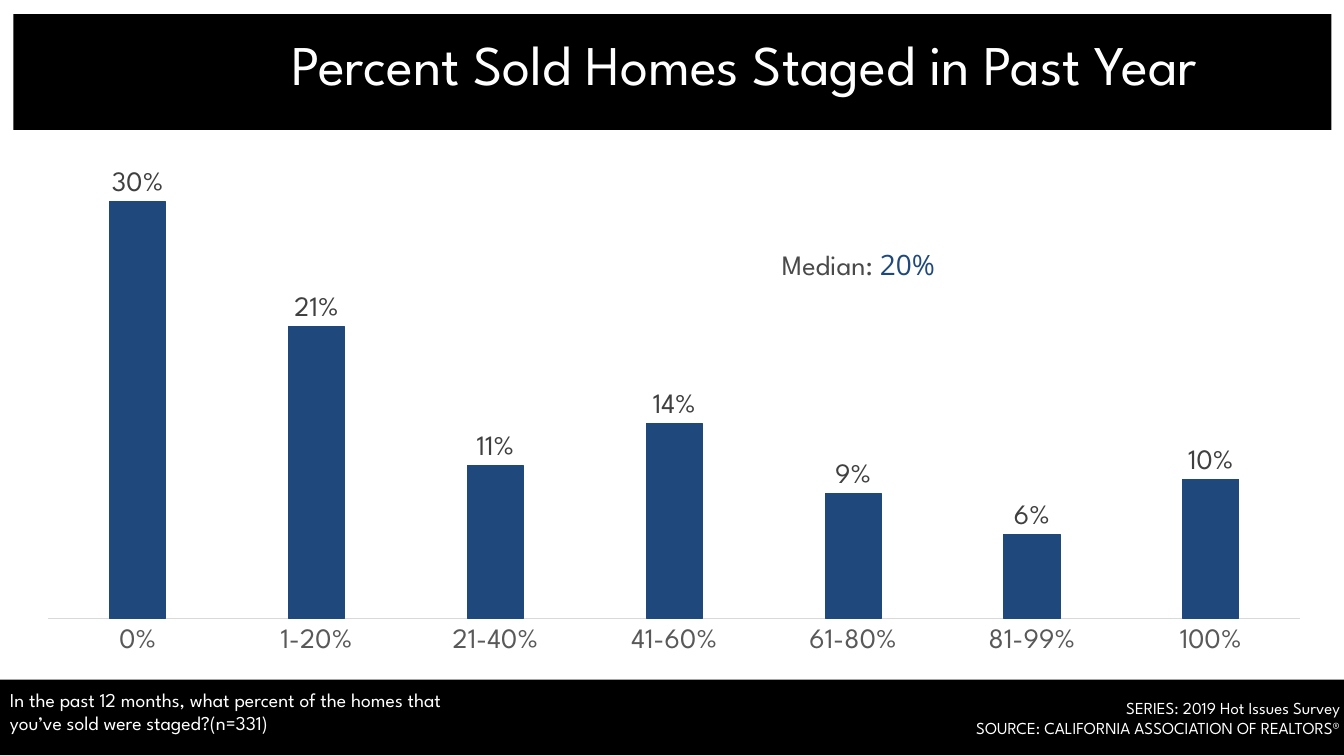
from dataclasses import dataclass

from lxml import etree
from pptx import Presentation
from pptx.chart.data import CategoryChartData
from pptx.dml.color import RGBColor
from pptx.enum.chart import XL_CHART_TYPE, XL_LABEL_POSITION, XL_TICK_LABEL_POSITION, XL_TICK_MARK
from pptx.enum.shapes import MSO_SHAPE
from pptx.enum.text import MSO_ANCHOR, MSO_AUTO_SIZE, PP_ALIGN
from pptx.oxml.ns import qn
from pptx.util import Pt


@dataclass(frozen=True)
class Theme:
    font: str = "League Spartan"
    accent_font: str = "Open Sans"
    black: RGBColor = RGBColor(0, 0, 0)
    white: RGBColor = RGBColor(255, 255, 255)
    blue: RGBColor = RGBColor(0x1F, 0x49, 0x7D)
    median: RGBColor = RGBColor(0x4A, 0x4A, 0x4A)
    label: RGBColor = RGBColor(0x40, 0x40, 0x40)
    category: RGBColor = RGBColor(0x59, 0x59, 0x59)
    axis: RGBColor = RGBColor(0xD9, 0xD9, 0xD9)
    title_size: int = 40
    body_size: int = 20
    question_size: int = 14
    source_size: int = 12
    chart_size: int = 10


THEME = Theme()
STAGED_SHARES = {"0%": 0.3, "1-20%": 0.21, "21-40%": 0.11, "41-60%": 0.14,
                 "61-80%": 0.09, "81-99%": 0.06, "100%": 0.1}


def style_font(font, size, color, name=THEME.font):
    font.name = name
    font.size = Pt(size)
    font.color.rgb = color


def add_band(s, *box):
    band = s.shapes.add_shape(MSO_SHAPE.RECTANGLE, *map(Pt, box))
    band.shadow.inherit = False
    band.fill.solid()
    band.fill.fore_color.rgb = THEME.black
    band.line.fill.background()


def set_title(s, text, *box):
    title = s.shapes.title
    title.left, title.top, title.width, title.height = map(Pt, box)
    tf = title.text_frame
    tf.text = text
    tf.auto_size = MSO_AUTO_SIZE.NONE
    tf.vertical_anchor = MSO_ANCHOR.MIDDLE
    p = tf.paragraphs[0]
    p.alignment = PP_ALIGN.CENTER
    p.line_spacing = 0.9
    style_font(p.font, THEME.title_size, THEME.white)


def add_text(s, lines, box, size, color, align=PP_ALIGN.LEFT):
    """Add one paragraph per line and return the last one."""
    tf = s.shapes.add_textbox(*map(Pt, box)).text_frame
    tf.word_wrap = True
    tf.text = "\n".join(lines)
    for p in tf.paragraphs:
        p.alignment = align
        style_font(p.font, size, color)
    return p


def set_plot_layout(chart, **fractions):
    """Fix the inner plot area as fractions of the chart frame."""
    plot_area = chart._chartSpace.chart.plotArea
    for old in plot_area.findall(qn("c:layout")):
        plot_area.remove(old)
    layout = etree.Element(qn("c:layout"))
    manual = etree.SubElement(layout, qn("c:manualLayout"))
    settings = {"layoutTarget": "inner", "xMode": "edge", "yMode": "edge", **fractions}
    for tag, value in settings.items():
        etree.SubElement(manual, qn(f"c:{tag}")).set("val", str(value))
    plot_area.insert(0, layout)


def add_column_chart(s, shares, *box):
    data = CategoryChartData(number_format="0%")
    data.categories = list(shares)
    data.add_series("Series 1", list(shares.values()))
    chart = s.shapes.add_chart(XL_CHART_TYPE.COLUMN_CLUSTERED, *map(Pt, box), data).chart
    chart.has_legend = False
    chart.has_title = False
    style_font(chart.font, THEME.chart_size, THEME.black)

    plot = chart.plots[0]
    plot.gap_width = 219
    plot.overlap = -27
    plot.vary_by_categories = False
    series = plot.series[0]
    series.format.fill.solid()
    series.format.fill.fore_color.rgb = THEME.blue
    series.format.line.color.rgb = THEME.blue
    series.format.line.width = Pt(0.75)
    labels = series.data_labels
    labels.show_value = True
    labels.position = XL_LABEL_POSITION.OUTSIDE_END
    labels.number_format = "0%"
    labels.number_format_is_linked = False
    style_font(labels.font, THEME.body_size, THEME.label)

    categories = chart.category_axis
    categories.major_tick_mark = XL_TICK_MARK.NONE
    categories.tick_label_position = XL_TICK_LABEL_POSITION.LOW
    categories.format.line.color.rgb = THEME.axis
    categories.format.line.width = Pt(0.75)
    style_font(categories.tick_labels.font, THEME.body_size, THEME.category)
    values = chart.value_axis
    values.visible = False
    values.has_major_gridlines = False
    values.minimum_scale = 0
    values.maximum_scale = 0.35
    set_plot_layout(chart, x=0.02, y=0.01, w=0.96, h=0.91)


def main():
    prs = Presentation()
    prs.slide_width, prs.slide_height = Pt(960), Pt(540)
    s = prs.slides.add_slide(prs.slide_layouts[5])

    add_band(s, 0, 485.5, 960, 54)
    add_band(s, 9.5, 10, 941.5, 82.75)
    # The title placeholder is already on the slide: raise it above the bands.
    s.shapes._spTree.append(s.shapes.title._element)
    set_title(s, "Percent Sold Homes Staged in Past Year", 122.5, 24.5, 818.5, 48)

    add_text(s, ["SERIES: 2019 Hot Issues Survey",
                 "SOURCE: CALIFORNIA ASSOCIATION OF REALTORS®"],
             (645, 494.5, 319.5, 36), THEME.source_size, THEME.white, PP_ALIGN.RIGHT)
    add_text(s, ["In the past 12 months, what percent of the homes that "
                 "you’ve sold were staged?(n=331)"],
             (0, 487.5, 344, 41), THEME.question_size, THEME.white)
    add_column_chart(s, STAGED_SHARES, 16, 90.75, 931.5, 381.5)
    p = add_text(s, ["Median: "], (551.5, 173, 268.5, 31.5), THEME.body_size, THEME.median)
    r = p.add_run()
    r.text = "20%"
    style_font(r.font, THEME.body_size, THEME.blue, THEME.accent_font)

    prs.save("out.pptx")


if __name__ == "__main__":
    main()
